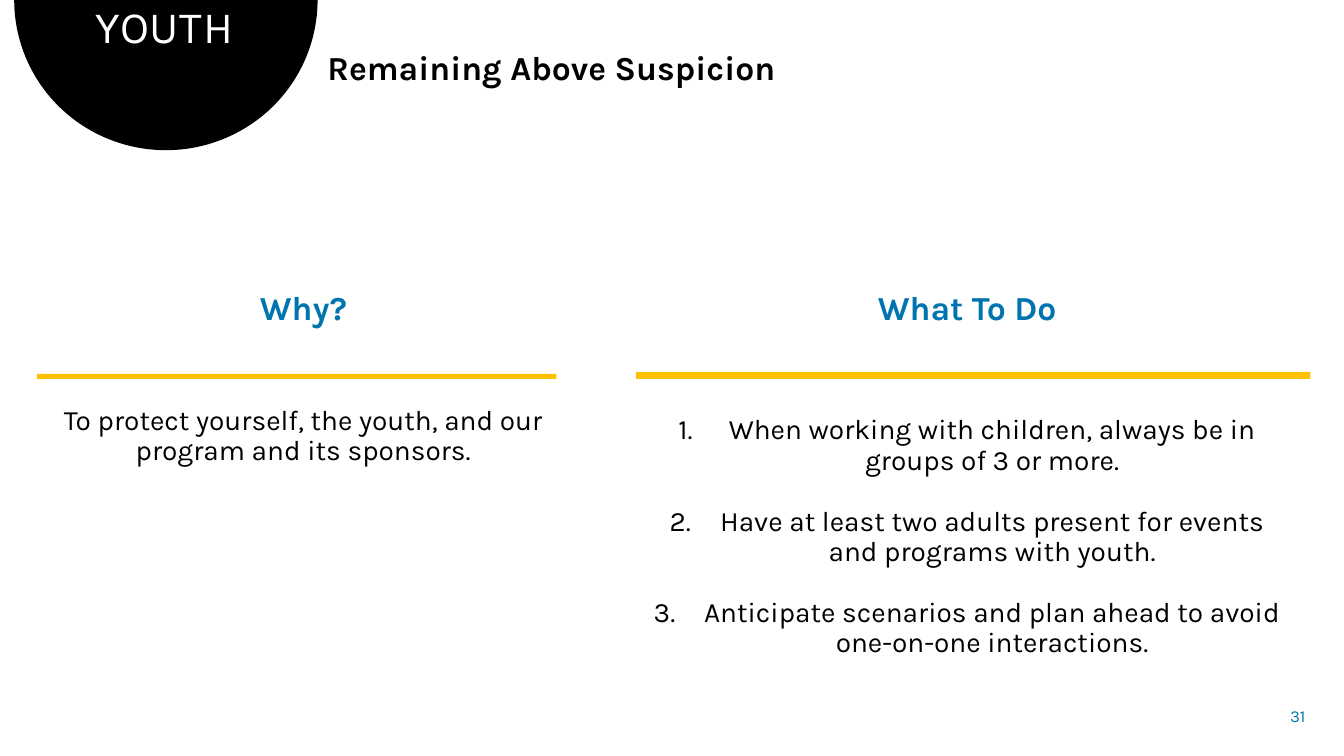
import math

from lxml import etree
from pptx import Presentation
from pptx.dml.color import RGBColor
from pptx.enum import shapes, text
from pptx.oxml import ns
from pptx.util import Pt

COLOURS = {"black": "000000", "white": "FFFFFF", "blue": "0074AF", "gold": "FFC000"}
CENTER, LEFT, RIGHT = text.PP_ALIGN.CENTER, text.PP_ALIGN.LEFT, text.PP_ALIGN.RIGHT


class SlideBuilder:
    """Holds the style and the current slide and draws each kind of element."""

    font = "Karla"
    line_spacing = 0.9

    def __init__(self, slide):
        self.slide = slide

    def paint(self, shape, colour):
        shape.shadow.inherit = False
        shape.fill.solid()
        shape.fill.fore_color.rgb = RGBColor.from_string(COLOURS[colour])
        shape.line.fill.background()

    def half_disc(self, center, width, height, steps=90):
        angles = [math.pi * step / steps for step in range(steps + 1)]
        points = [
            (Pt(center + width / 2 * math.cos(a)), Pt(height * math.sin(a)))
            for a in angles
        ]
        outline = self.slide.shapes.build_freeform(*points[0])
        outline.add_line_segments(points[1:], close=True)
        self.paint(outline.convert_to_shape(), "black")

    def rule(self, left, top, width, height):
        bar = self.slide.shapes.add_shape(
            shapes.MSO_SHAPE.RECTANGLE, Pt(left), Pt(top), Pt(width), Pt(height)
        )
        self.paint(bar, "gold")

    def frame(self, shape, anchor=text.MSO_ANCHOR.TOP):
        frame = shape.text_frame
        frame.word_wrap = True
        frame.auto_size = text.MSO_AUTO_SIZE.NONE
        frame.vertical_anchor = anchor
        return frame

    def text_box(self, left, top, width, height, anchor=text.MSO_ANCHOR.TOP):
        box = self.slide.shapes.add_textbox(Pt(left), Pt(top), Pt(width), Pt(height))
        return self.frame(box, anchor)

    def paragraph(self, frame, words, size, colour, align=CENTER, bold=False,
                  before=0, after=0, numbered=False):
        first = frame.paragraphs[0]
        line = frame.add_paragraph() if first.text else first
        line.text = words
        if numbered:
            props = line._p.get_or_add_pPr()
            props.set("marL", str(Pt(36)))
            props.set("indent", str(-Pt(36)))
            etree.SubElement(props, ns.qn("a:buAutoNum"), type="arabicPeriod")
        line.alignment = align
        line.line_spacing = self.line_spacing
        line.space_before, line.space_after = Pt(before), Pt(after)
        line.font.name, line.font.size, line.font.bold = self.font, Pt(size), bold
        line.font.color.rgb = RGBColor.from_string(COLOURS[colour])
        return line

    def title(self, words, left, top, width, height):
        heading = self.slide.shapes.title
        self.slide.shapes._spTree.append(heading._element)
        heading.left, heading.top = Pt(left), Pt(top)
        heading.width, heading.height = Pt(width), Pt(height)
        line = self.paragraph(self.frame(heading), words, 32, "white")
        line.font._rPr.set("spc", "60")

    def column(self, heading, items, left, width, height, gap, numbered=False):
        frame = self.text_box(left, 204.5, width, height)
        self.paragraph(frame, heading, 24, "blue", bold=True, after=24)
        for index, item in enumerate(items):
            self.paragraph(frame, item, 20, "black", before=10 if index else gap,
                           after=12, numbered=numbered)


def main():
    deck = Presentation()
    deck.slide_width, deck.slide_height = Pt(960), Pt(540)
    page = SlideBuilder(deck.slides.add_slide(deck.slide_layouts[5]))

    page.half_disc(118.5, 216.7, 107.3)
    page.title("YOUTH", 23.8, 0, 187.2, 42.5)
    topic = page.text_box(226.8, 33.1, 715, 33.1)
    page.paragraph(topic, "Remaining Above Suspicion", 24, "black", LEFT, bold=True)

    page.column(
        "Why?",
        ["To protect yourself, the youth, and our program and its sponsors."],
        23.8, 385.9, 177.1, gap=32,
    )
    page.rule(26.6, 267.1, 370.8, 3.6)

    page.column(
        "What To Do",
        [
            "When working with children, always be in groups of 3 or more.",
            "Have at least two adults present for events and programs with youth.",
            "Anticipate scenarios and plan ahead to avoid one-on-one interactions.",
        ],
        454.3, 473, 269.3, gap=39, numbered=True,
    )
    page.rule(454.3, 265.7, 481.7, 5)

    number = page.text_box(900, 497.5, 39.6, 28.8, text.MSO_ANCHOR.MIDDLE)
    page.paragraph(number, "31", 12, "blue", RIGHT)
    deck.save("out.pptx")


if __name__ == "__main__":
    main()
